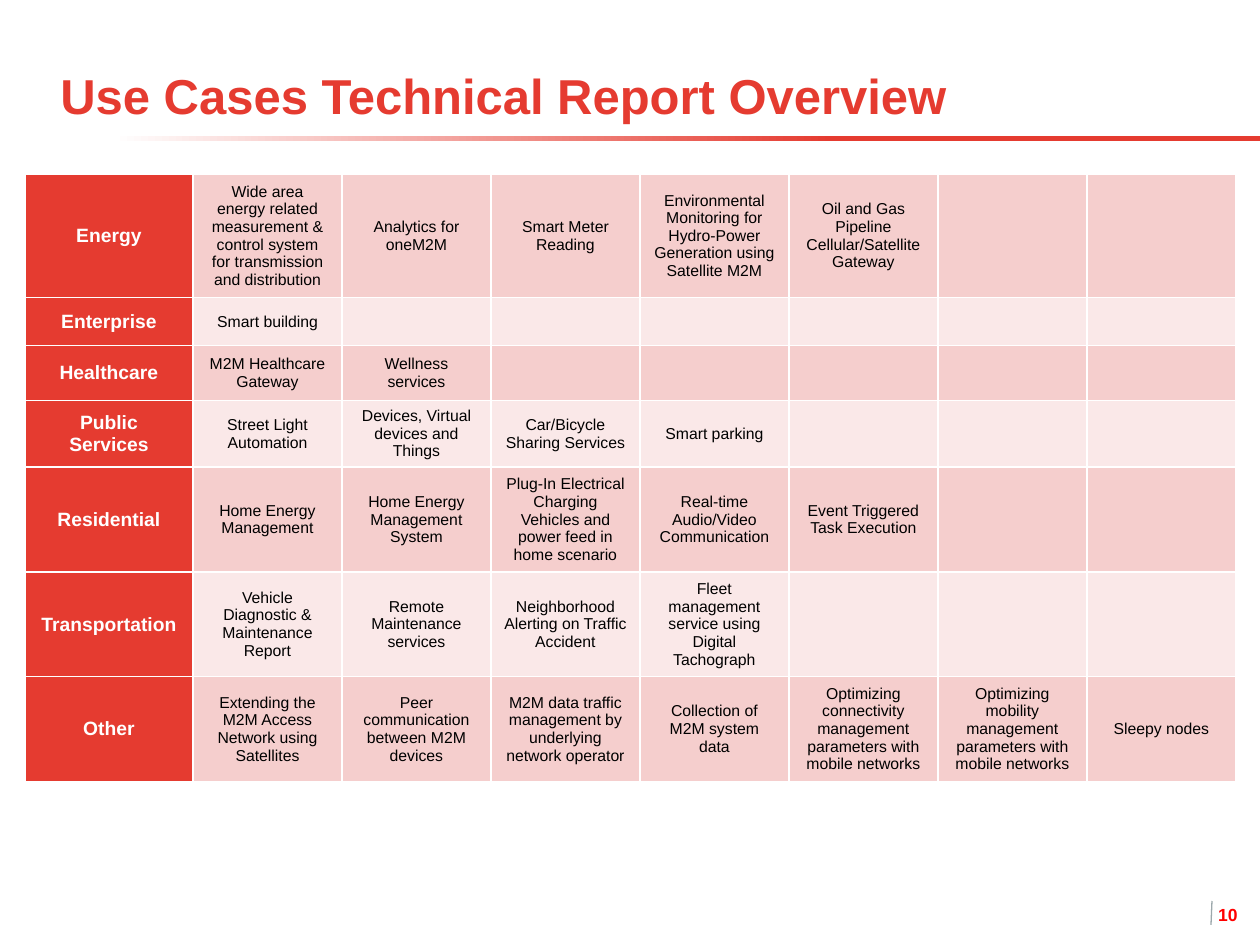
"""Build the use cases overview slide with its table of cases by sector."""
from lxml import etree
from pptx import Presentation
from pptx.dml.color import RGBColor
from pptx.enum.shapes import MSO_CONNECTOR, MSO_SHAPE
from pptx.enum.text import MSO_ANCHOR, PP_ALIGN
from pptx.oxml.ns import qn
from pptx.util import Emu, Pt

STRAIGHT = MSO_CONNECTOR.STRAIGHT
RECTANGLE = MSO_SHAPE.RECTANGLE
MIDDLE, BOTTOM = MSO_ANCHOR.MIDDLE, MSO_ANCHOR.BOTTOM
LEFT, CENTER, RIGHT = PP_ALIGN.LEFT, PP_ALIGN.CENTER, PP_ALIGN.RIGHT

RED = RGBColor(0xE5, 0x3B, 0x30)
PAGE_RED = RGBColor(0xFF, 0x00, 0x00)
PINK = RGBColor(0xF5, 0xCE, 0xCD)
PALE_PINK = RGBColor(0xFA, 0xE8, 0xE8)
WHITE = RGBColor(0xFF, 0xFF, 0xFF)
BLACK = RGBColor(0x00, 0x00, 0x00)
GREY = RGBColor(0x9C, 0xA8, 0xAC)

TITLE = "Use Cases Technical Report Overview"
PAGE_NUMBER = "10"
SECTORS = [
    ("Energy", 118, [
        "Wide area energy related measurement & control system for transmission and distribution",
        "Analytics for oneM2M",
        "Smart Meter Reading",
        "Environmental Monitoring for Hydro-Power Generation using Satellite M2M",
        "Oil and Gas Pipeline Cellular/Satellite Gateway",
    ]),
    ("Enterprise", 46, ["Smart building"]),
    ("Healthcare", 55, ["M2M Healthcare Gateway", "Wellness services"]),
    ("Public Services", 66, [
        "Street Light Automation",
        "Devices, Virtual devices and Things",
        "Car/Bicycle Sharing Services",
        "Smart parking",
    ]),
    ("Residential", 100, [
        "Home Energy Management",
        "Home Energy Management System",
        "Plug-In Electrical Charging Vehicles and power feed in home scenario",
        "Real-time Audio/Video Communication",
        "Event Triggered Task Execution",
    ]),
    ("Transportation", 101, [
        "Vehicle Diagnostic & Maintenance Report",
        "Remote Maintenance services",
        "Neighborhood Alerting on Traffic Accident",
        "Fleet management service using Digital Tachograph",
    ]),
    ("Other", 100, [
        "Extending the M2M Access Network using Satellites",
        "Peer communication between M2M devices",
        "M2M data traffic management by underlying network operator",
        "Collection of M2M system data",
        "Optimizing connectivity management parameters with mobile networks",
        "Optimizing mobility management parameters with mobile networks",
        "Sleepy nodes",
    ]),
]
TABLE_LEFT, TABLE_TOP = 25, 174
SECTOR_WIDTH, CASE_WIDTH = 168, 149
CELL_MARGIN = 5
EMU_PER_PX = 914400 / 126


def px(length):
    return Emu(round(length * EMU_PER_PX))


def write(frame, text, size, color, bold=False, align=LEFT):
    para = frame.paragraphs[0]
    para.alignment = align
    span = para.add_run()
    span.text = text
    span.font.name = "Arial"
    span.font.size = Pt(size)
    span.font.bold = bold
    span.font.color.rgb = color


def add_text(page, area, text, anchor, **style):
    box = page.shapes.add_textbox(*map(px, area))
    box.text_frame.word_wrap = True
    box.text_frame.vertical_anchor = anchor
    write(box.text_frame, text, **style)


def add_rule(page):
    rule = page.shapes.add_shape(RECTANGLE, px(0), px(136), px(1260), px(5))
    rule.shadow.inherit = False
    rule.line.fill.background()
    rule.fill.gradient()
    rule.fill.gradient_angle = 0
    for stop, position, color in zip(rule.fill.gradient_stops, (0.09, 0.66), (WHITE, RED)):
        stop.position = position
        stop.color.rgb = color


def add_page_mark(page):
    mark = page.shapes.add_connector(STRAIGHT, px(1211), px(925), px(1212), px(901))
    mark.line.color.rgb = GREY
    mark.line.width = Pt(0.75)
    etree.SubElement(mark.element.spPr, qn("a:effectLst"))


def set_borders(cell, color, width):
    properties = cell._tc.get_or_add_tcPr()
    for index, side in enumerate(("lnL", "lnR", "lnT", "lnB")):
        border = etree.Element(qn(f"a:{side}"), w=str(Pt(width)))
        fill = etree.SubElement(border, qn("a:solidFill"))
        etree.SubElement(fill, qn("a:srgbClr"), val=str(color))
        properties.insert(index, border)


def add_sector_table(page):
    case_columns = max(len(cases) for _, _, cases in SECTORS)
    widths = [SECTOR_WIDTH] + [CASE_WIDTH] * case_columns
    heights = [height for _, height, _ in SECTORS]
    area = (TABLE_LEFT, TABLE_TOP, sum(widths), sum(heights))
    table = page.shapes.add_table(len(heights), len(widths), *map(px, area)).table
    table.first_row = table.horz_banding = False
    for column, width in zip(table.columns, widths):
        column.width = px(width)
    for row_index, (sector, height, cases) in enumerate(SECTORS):
        row = table.rows[row_index]
        row.height = px(height)
        band = PALE_PINK if row_index % 2 else PINK
        texts = [sector] + cases
        for column_index, cell in enumerate(row.cells):
            is_sector = column_index == 0
            cell.fill.solid()
            cell.fill.fore_color.rgb = RED if is_sector else band
            cell.vertical_anchor = MIDDLE
            cell.margin_top = cell.margin_bottom = px(CELL_MARGIN)
            set_borders(cell, WHITE, 1)
            if column_index < len(texts):
                write(cell.text_frame, texts[column_index], size=11 if is_sector else 9,
                      color=WHITE if is_sector else BLACK, bold=is_sector, align=CENTER)


def main():
    deck = Presentation()
    deck.slide_width, deck.slide_height = px(1260), px(945)
    page = deck.slides.add_slide(deck.slide_layouts[6])
    add_text(page, (1193, 890, 57, 50), PAGE_NUMBER, MIDDLE,
             size=10, color=PAGE_RED, bold=True, align=RIGHT)
    add_page_mark(page)
    add_rule(page)
    add_text(page, (48, 11, 1182, 120), TITLE, BOTTOM, size=28, color=RED, bold=True)
    add_sector_table(page)
    deck.save("out.pptx")


if __name__ == "__main__":
    main()
